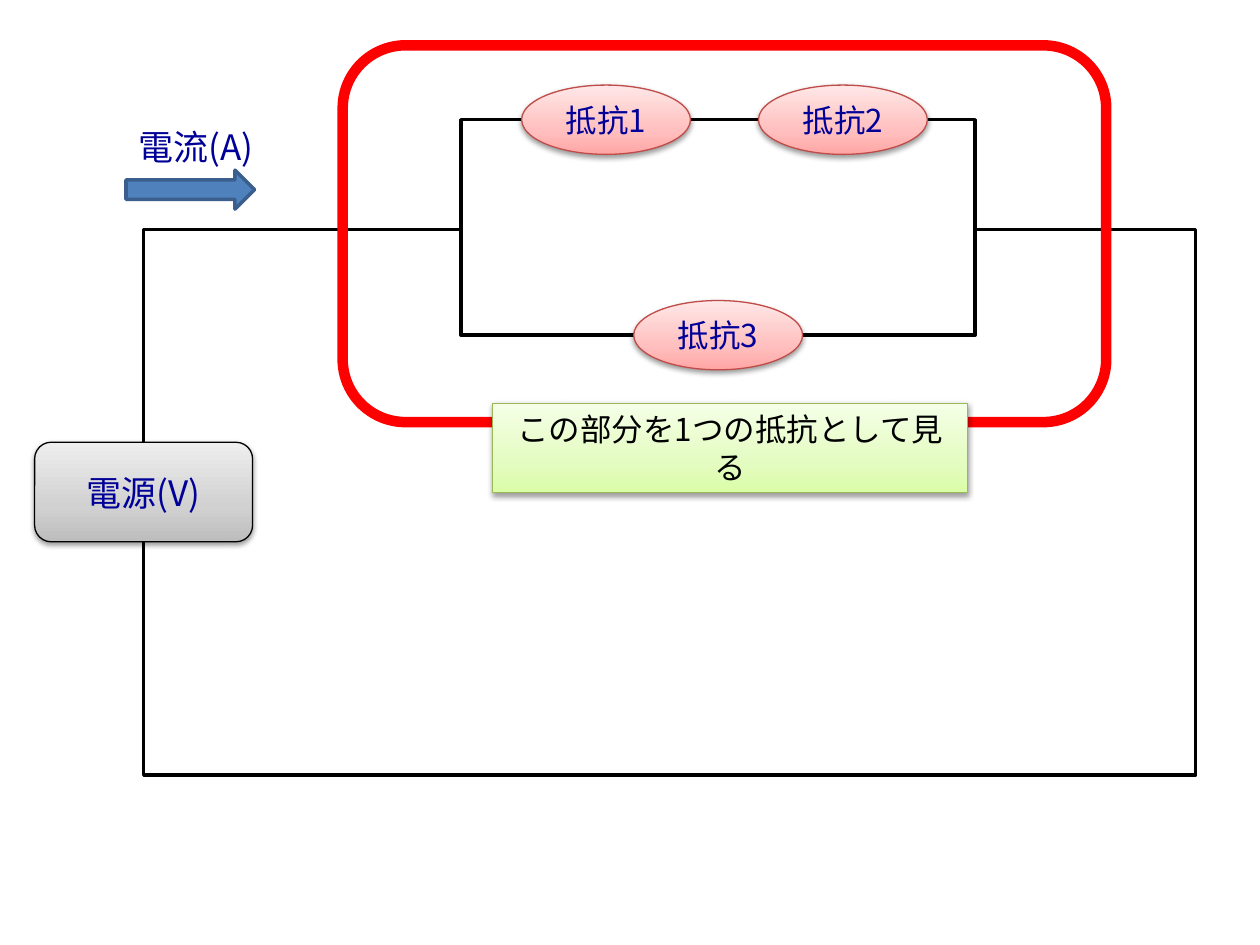
from dataclasses import dataclass
from typing import Optional, Union

from lxml.etree import SubElement
from pptx import Presentation
from pptx.dml.color import RGBColor
from pptx.enum.shapes import MSO_SHAPE as Shape
from pptx.enum.text import MSO_ANCHOR as Anchor, MSO_AUTO_SIZE as AutoSize, PP_ALIGN as Align
from pptx.oxml.ns import qn
from pptx.util import Inches, Pt

COLUMNS, ROWS = 100, 75
SLIDE_WIDTH, SLIDE_HEIGHT = Inches(10), Inches(7.5)


@dataclass(frozen=True)
class Gradient:
    bottom: str
    middle: str
    top: str


@dataclass(frozen=True)
class Theme:
    font: str = "Noto Sans CJK JP"
    label: str = "000099"
    ink: str = "000000"
    paper: str = "FFFFFF"
    highlight: str = "FF0000"
    arrow: str = "4F81BD"
    arrow_edge: str = "3A5F8C"
    resistor: Gradient = Gradient("FFA6A5", "FFC0BF", "FFE7E7")
    resistor_edge: str = "BF4C48"
    source: Gradient = Gradient("BDBDBD", "D1D1D1", "EEEEEE")
    note: Gradient = Gradient("DAFDA7", "E4FCC2", "F5FFE7")
    note_edge: str = "98B955"
    large: int = 20
    normal: int = 18
    thin: float = 0.75
    wire: float = 2
    frame: float = 6


THEME = Theme()


@dataclass(frozen=True)
class Box:
    column: float
    row: float
    columns: float
    rows: float

    def emu(self) -> tuple:
        cell_width, cell_height = SLIDE_WIDTH / COLUMNS, SLIDE_HEIGHT / ROWS
        return (round(self.column * cell_width), round(self.row * cell_height),
                round(self.columns * cell_width), round(self.rows * cell_height))


@dataclass(frozen=True)
class Label:
    text: str
    size: int
    color: str = THEME.label


@dataclass(frozen=True)
class Part:
    kind: Shape
    box: Box
    edge: str
    weight: float
    fill: Union[str, Gradient, None] = None
    label: Optional[Label] = None


def write(frame, label: Label) -> None:
    run = frame.paragraphs[0].add_run()
    run.text = label.text
    run.font.size = Pt(label.size)
    run.font.name = THEME.font
    run.font.color.rgb = RGBColor.from_string(label.color)
    SubElement(run.font._element, qn("a:ea"), typeface=THEME.font)


def shade(shape, gradient: Gradient) -> None:
    shape.fill.gradient()
    shape.fill.gradient_angle = 90
    stops = shape._element.spPr.find(qn("a:gradFill")).find(qn("a:gsLst"))
    for stop in list(stops):
        stops.remove(stop)
    for share, color in ((0, gradient.bottom), (35, gradient.middle), (100, gradient.top)):
        stop = SubElement(stops, qn("a:gs"), pos=str(share * 1000))
        SubElement(stop, qn("a:srgbClr"), val=color)


def cast_shadow(shape) -> None:
    effects = shape._element.spPr.find(qn("a:effectLst"))
    shadow = SubElement(effects, qn("a:outerShdw"), blurRad=str(Pt(3.1)), dist=str(Pt(1.6)),
                        dir=str(90 * 60000), rotWithShape="0")
    color = SubElement(shadow, qn("a:srgbClr"), val=THEME.ink)
    SubElement(color, qn("a:alpha"), val="38000")


def draw(slide, part: Part) -> None:
    shape = slide.shapes.add_shape(part.kind, *part.box.emu())
    shape.shadow.inherit = False
    shape.line.color.rgb = RGBColor.from_string(part.edge)
    shape.line.width = Pt(part.weight)
    if part.fill is None:
        shape.fill.background()
    elif isinstance(part.fill, Gradient):
        shade(shape, part.fill)
        cast_shadow(shape)
    else:
        shape.fill.solid()
        shape.fill.fore_color.rgb = RGBColor.from_string(part.fill)
    if part.label:
        frame = shape.text_frame
        frame.word_wrap = True
        frame.vertical_anchor = Anchor.MIDDLE
        frame.paragraphs[0].alignment = Align.CENTER
        write(frame, part.label)


def draw_caption(slide, box: Box, label: Label) -> None:
    frame = slide.shapes.add_textbox(*box.emu()).text_frame
    frame.word_wrap = False
    frame.auto_size = AutoSize.SHAPE_TO_FIT_TEXT
    write(frame, label)


def resistor(number: int, center_column: float, wire_row: float) -> Part:
    columns, rows = 13.4, 5.5
    box = Box(center_column - columns / 2, wire_row - rows / 2, columns, rows)
    return Part(Shape.OVAL, box, THEME.resistor_edge, THEME.thin, THEME.resistor,
                Label(f"抵抗{number}", THEME.normal))


def main() -> None:
    deck = Presentation()
    deck.slide_width, deck.slide_height = SLIDE_WIDTH, SLIDE_HEIGHT
    slide = deck.slides.add_slide(deck.slide_layouts[6])

    main_loop = Box(11.4, 18.2, 83.5, 43.3)
    parallel = Box(36.6, 9.5, 40.8, 17.1)
    upper_wire, lower_wire = parallel.row, parallel.row + parallel.rows
    source_columns = 17.3
    source = Box(main_loop.column - source_columns / 2, 35.1, source_columns, 7.9)

    circuit = (
        Part(Shape.RECTANGLE, main_loop, THEME.ink, THEME.wire),
        Part(Shape.ROUNDED_RECTANGLE, source, THEME.ink, THEME.thin, THEME.source,
             Label("電源(V)", THEME.large)),
        Part(Shape.RECTANGLE, parallel, THEME.ink, THEME.wire, THEME.paper),
        resistor(1, 48.1, upper_wire),
        resistor(2, 66.9, upper_wire),
        resistor(3, 57, lower_wire),
        Part(Shape.RIGHT_ARROW, Box(10, 13.5, 10.2, 3.1), THEME.arrow_edge, THEME.wire,
             THEME.arrow),
    )
    combined = (
        Part(Shape.ROUNDED_RECTANGLE, Box(27.2, 3.6, 60.6, 29.9), THEME.highlight, THEME.frame),
        Part(Shape.RECTANGLE, Box(39.1, 32, 37.7, 7.1), THEME.note_edge, THEME.thin, THEME.note,
             Label("この部分を1つの抵抗として見る", THEME.normal, THEME.ink)),
    )

    for part in circuit:
        draw(slide, part)
    draw_caption(slide, Box(10, 9.5, 12.3, 4.4), Label("電流(A)", THEME.large))
    for part in combined:
        draw(slide, part)
    deck.save("out.pptx")


if __name__ == "__main__":
    main()
